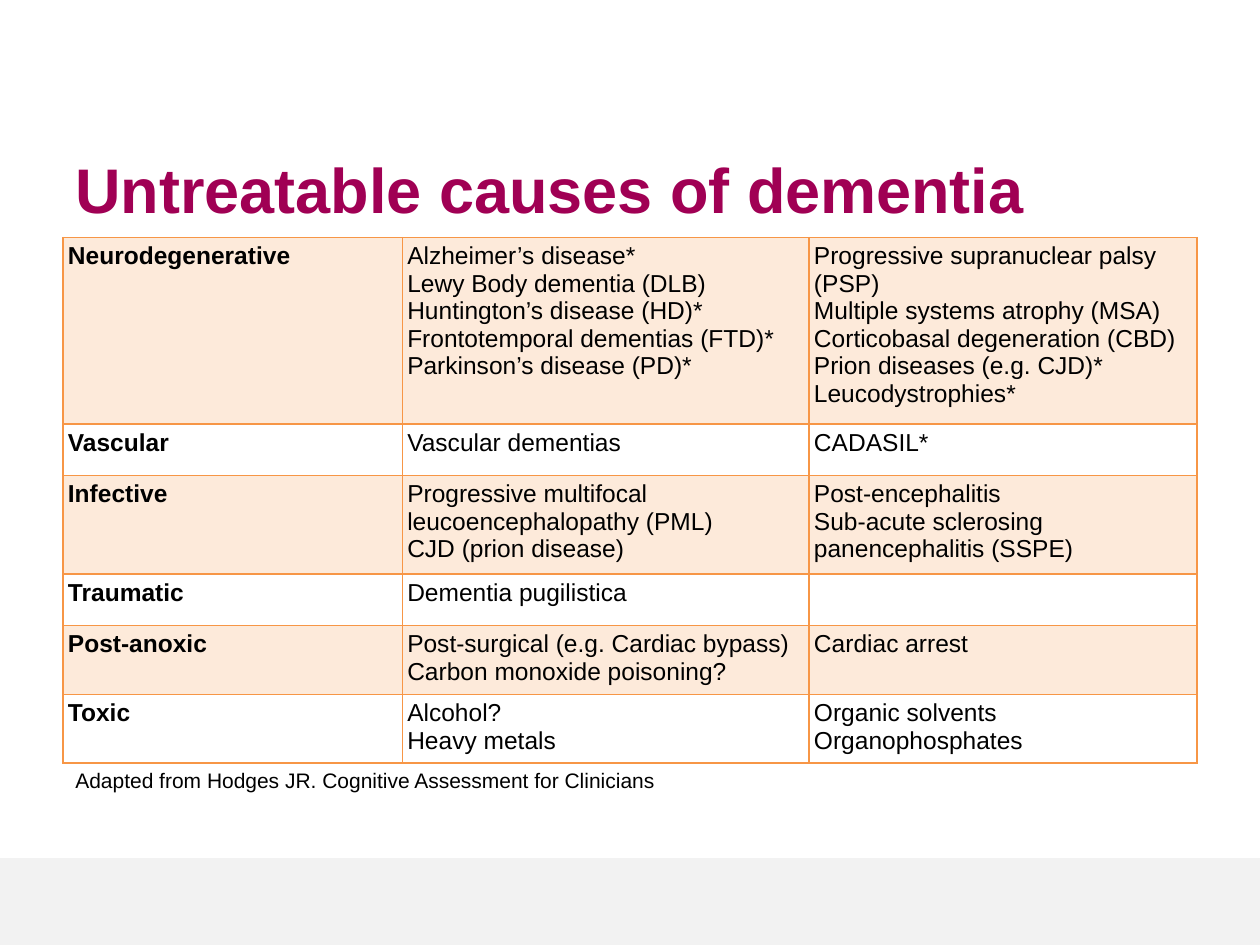
from lxml.etree import SubElement
from pptx import Presentation
from pptx.dml.color import RGBColor
from pptx.enum.shapes import MSO_SHAPE
from pptx.enum.text import MSO_ANCHOR
from pptx.oxml.ns import qn
from pptx.util import Cm, Pt

BLACK = RGBColor(0x00, 0x00, 0x00)
PLUM = RGBColor(0xA0, 0x00, 0x54)
ORANGE = RGBColor(0xF7, 0x96, 0x46)
GREY = RGBColor(0xF2, 0xF2, 0xF2)

CAUSES = [
    ("Neurodegenerative",
     "Alzheimer’s disease*\nLewy Body dementia (DLB)\nHuntington’s disease (HD)*\n"
     "Frontotemporal dementias (FTD)*\nParkinson’s disease (PD)*",
     "Progressive supranuclear palsy (PSP)\nMultiple systems atrophy (MSA)\n"
     "Corticobasal degeneration (CBD)\nPrion diseases (e.g. CJD)*\nLeucodystrophies*"),
    ("Vascular", "Vascular dementias", "CADASIL*"),
    ("Infective",
     "Progressive multifocal leucoencephalopathy (PML)\nCJD (prion disease)",
     "Post-encephalitis\nSub-acute sclerosing panencephalitis (SSPE)"),
    ("Traumatic", "Dementia pugilistica", ""),
    ("Post-anoxic",
     "Post-surgical (e.g. Cardiac bypass)\nCarbon monoxide poisoning?",
     "Cardiac arrest"),
    ("Toxic", "Alcohol?\nHeavy metals", "Organic solvents\nOrganophosphates"),
]


class SlideBuilder:
    font = "Arial"
    cell_margin = Cm(0.1)

    def __init__(self, s):
        self.s = s

    def set_text(self, tf, text, size, color=BLACK, bold=False):
        tf.text = text
        for p in tf.paragraphs:
            p.font.name, p.font.size = self.font, Pt(size)
            p.font.bold, p.font.color.rgb = bold, color

    def band(self, x, y, w, h, color):
        sp = self.s.shapes.add_shape(MSO_SHAPE.RECTANGLE, x, y, w, h)
        sp.shadow.inherit = False
        sp.fill.solid()
        sp.fill.fore_color.rgb = color
        sp.line.fill.background()

    def text(self, x, y, w, h, text, size, color=BLACK, bold=False):
        tf = self.s.shapes.add_textbox(x, y, w, h).text_frame
        tf.word_wrap = True
        tf.vertical_anchor = MSO_ANCHOR.MIDDLE
        self.set_text(tf, text, size, color, bold)

    def borders(self, cell, color, width):
        tcPr = cell._tc.get_or_add_tcPr()
        for side in ("a:lnL", "a:lnR", "a:lnT", "a:lnB"):
            ln = SubElement(tcPr, qn(side), w=str(Pt(width)))
            fill = SubElement(ln, qn("a:solidFill"))
            SubElement(fill, qn("a:srgbClr"), val=str(color))

    def tint(self, cell, color, percent):
        cell.fill.solid()
        cell.fill.fore_color.rgb = color
        clr = cell._tc.tcPr.find(qn("a:solidFill")).find(qn("a:srgbClr"))
        SubElement(clr, qn("a:alpha"), val=str(percent * 1000))

    def table(self, x, y, widths, row_height, rows):
        table = self.s.shapes.add_table(
            len(rows), len(widths), x, y, sum(widths), row_height * len(rows)).table
        table.first_row = table.horz_banding = False
        for column, width in zip(table.columns, widths):
            column.width = width
        for i, row in enumerate(rows):
            for j, text in enumerate(row):
                cell = table.cell(i, j)
                cell.margin_left = cell.margin_right = self.cell_margin
                cell.margin_top = cell.margin_bottom = self.cell_margin
                self.set_text(cell.text_frame, text, 14, bold=j == 0)
                self.borders(cell, ORANGE, 1)
                # Every other row is tinted
                if i % 2 == 0:
                    self.tint(cell, ORANGE, 20)
                else:
                    cell.fill.background()


def main():
    prs = Presentation()
    prs.slide_width, prs.slide_height = Cm(25.4), Cm(19.05)
    slide = SlideBuilder(prs.slides.add_slide(prs.slide_layouts[6]))

    # Footer band
    slide.band(0, Cm(17.3), prs.slide_width, Cm(1.75), GREY)

    # Title
    slide.text(Cm(1.27), Cm(2.85), Cm(21.77), Cm(1.88),
               "Untreatable causes of dementia", 36, PLUM, bold=True)

    # Causes by group
    slide.table(Cm(1.27), Cm(4.79), [Cm(6.84), Cm(8.2), Cm(7.82)], Cm(1.04), CAUSES)

    # Reference
    slide.text(Cm(1.27), Cm(15.35), Cm(21.77), Cm(0.75),
               "Adapted from Hodges JR. Cognitive Assessment for Clinicians", 12)

    prs.save("out.pptx")


if __name__ == "__main__":
    main()
